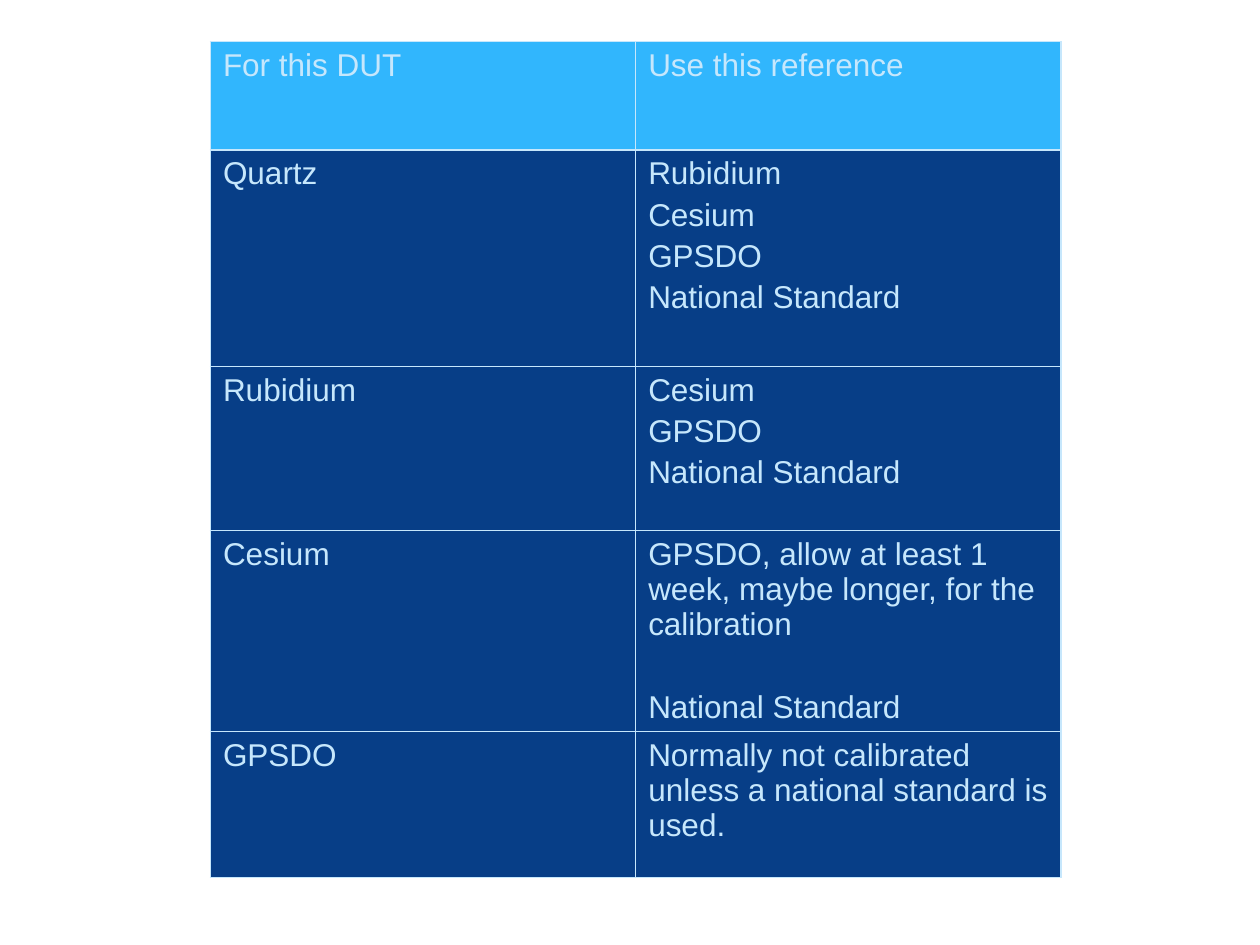
from lxml import etree
from pptx import Presentation
from pptx.dml.color import RGBColor
from pptx.oxml.ns import qn
from pptx.util import Inches, Pt

COLORS = {"header": "31B6FD", "body": "073E87", "pale": "C6E7FC"}
FONT = {"name": "Arial", "size": Pt(18), "bold": False}
LINE_GAP, BLOCK_GAP = Pt(3.4), Pt(27)

# Each row: height in inches, device under test, its references, gap between them
ROWS = [
    (0.86, "For this DUT", ["Use this reference"], LINE_GAP),
    (1.72, "Quartz", ["Rubidium", "Cesium", "GPSDO", "National Standard"], LINE_GAP),
    (1.3, "Rubidium", ["Cesium", "GPSDO", "National Standard"], LINE_GAP),
    (1.58, "Cesium",
     ["GPSDO, allow at least 1 week, maybe longer, for the calibration",
      "National Standard"], BLOCK_GAP),
    (1.16, "GPSDO",
     ["Normally not calibrated unless a national standard is used."], LINE_GAP),
]


def add_borders(cell):
    """Draw a thin pale line on all four sides; the lines must precede the fill."""
    properties = cell._tc.get_or_add_tcPr()
    for position, side in enumerate(("a:lnL", "a:lnR", "a:lnT", "a:lnB")):
        line = etree.Element(qn(side), w=str(Pt(1)))
        fill = etree.SubElement(line, qn("a:solidFill"))
        etree.SubElement(fill, qn("a:srgbClr"), val=COLORS["pale"])
        properties.insert(position, line)


deck = Presentation()
deck.slide_width, deck.slide_height = Inches(10), Inches(7.5)
page = deck.slides.add_slide(deck.slide_layouts[6])

total_height = sum(row[0] for row in ROWS)
table = page.shapes.add_table(
    len(ROWS), 2, Inches(1.67), Inches(0.33), Inches(6.75), Inches(total_height)
).table

for row_index, (height, device, references, gap) in enumerate(ROWS):
    table.rows[row_index].height = Inches(height)
    for column_index, lines in enumerate(([device], references)):
        cell = table.cell(row_index, column_index)
        cell.fill.solid()
        cell.fill.fore_color.rgb = RGBColor.from_string(
            COLORS["body" if row_index else "header"])
        add_borders(cell)
        cell.text_frame.text = "\n".join(lines)
        for line_index, para in enumerate(cell.text_frame.paragraphs):
            if line_index:
                para.space_before = gap
            for span in para.runs:
                for name, value in FONT.items():
                    setattr(span.font, name, value)
                span.font.color.rgb = RGBColor.from_string(COLORS["pale"])

deck.save("out.pptx")
